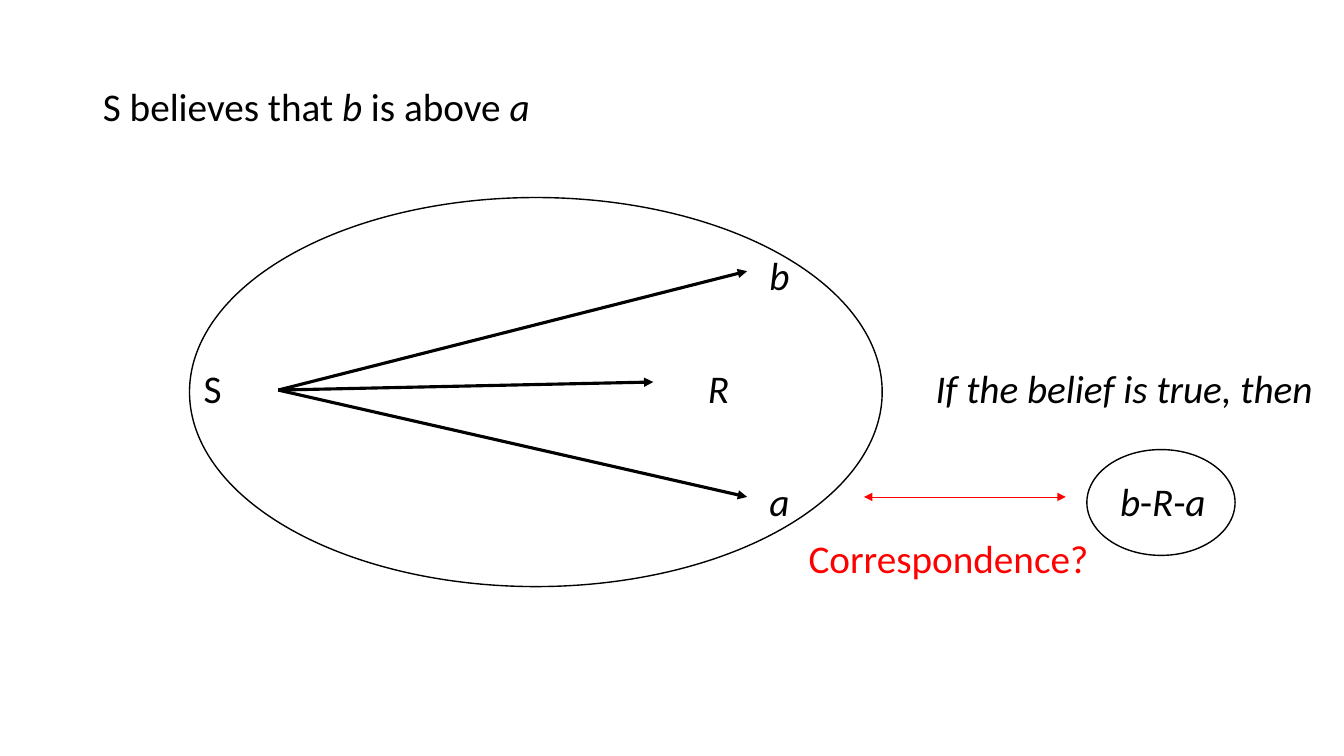
from lxml.etree import SubElement
from pptx import Presentation
from pptx.dml.color import RGBColor
from pptx.enum.shapes import MSO_CONNECTOR, MSO_SHAPE
from pptx.oxml.ns import qn
from pptx.util import Inches, Pt

COLORS = {"ink": "000000", "accent": "FF0000"}
FONT, FONT_SIZE = "Calibri", 28
TEXT_TOP, ROW_PITCH, ROW_HEIGHT = 0.82, 0.56, 0.53

STATEMENT = [("S believes that ", False), ("b", True), (" is above ", False), ("a", True)]
LABELS = [
    (3, 7.63, 0.4, [("b", True)], "ink"),
    (5, 2.02, 0.4, [("S", False)], "ink"),
    (5, 7.02, 0.4, [("R", True)], "ink"),
    (5, 9.28, 4.0, [("If the belief is true, then", True)], "ink"),
    (7, 7.63, 0.4, [("a", True)], "ink"),
    (7, 11.11, 1.1, [("b", True), ("-", False), ("R", True), ("-", False), ("a", True)], "ink"),
    (8, 8.02, 3.0, [("Correspondence?", False)], "accent"),
]
SUBJECT = (2.76, 3.87)
BELIEF_TARGETS = [(7.41, 2.69), (6.48, 3.79), (7.41, 4.93)]
CORRESPONDENCE = ((8.57, 4.93), (10.57, 4.93))
ELLIPSES = [(1.88, 1.96, 6.87, 3.86), (10.78, 4.46, 1.47, 1.05)]


def color(name):
    return RGBColor.from_string(COLORS[name])


def write_text(shape, runs, color_name):
    frame = shape.text_frame
    frame.word_wrap = True
    frame.margin_left = frame.margin_right = 0
    frame.margin_top = frame.margin_bottom = Inches(0.05)
    paragraph = frame.paragraphs[0]
    paragraph.line_spacing = 0.9
    paragraph.space_before = Pt(0)
    paragraph.font.name = FONT
    paragraph.font.size = Pt(FONT_SIZE)
    paragraph.font.color.rgb = color(color_name)
    for text, italic in runs:
        run = paragraph.add_run()
        run.text = text
        run.font.italic = italic
    return paragraph


def add_arrow(slide, start, end, color_name, width, ends):
    points = [Inches(value) for value in (*start, *end)]
    arrow = slide.shapes.add_connector(MSO_CONNECTOR.STRAIGHT, *points)
    arrow.line.color.rgb = color(color_name)
    arrow.line.width = Pt(width)
    line = arrow.line._get_or_add_ln()
    for end_tag in ends:
        SubElement(line, qn(end_tag), type="triangle")
    SubElement(arrow._element.spPr, qn("a:effectLst"))


def add_ellipse(slide, bounds):
    ellipse = slide.shapes.add_shape(MSO_SHAPE.OVAL, *map(Inches, bounds))
    ellipse.shadow.inherit = False
    ellipse.fill.background()
    ellipse.line.color.rgb = color("ink")
    ellipse.line.width = Pt(1)


def add_statement(slide):
    title, body = slide.placeholders
    title._element.getparent().remove(title._element)
    body.left, body.top = Inches(1.02), Inches(TEXT_TOP)
    body.width, body.height = Inches(11.5), Inches(ROW_HEIGHT)
    properties = write_text(body, STATEMENT, "ink")._p.get_or_add_pPr()
    properties.set("marL", "0")
    properties.set("indent", "0")
    bullet = properties.makeelement(qn("a:buNone"))
    properties.find(qn("a:defRPr")).addprevious(bullet)


def main():
    presentation = Presentation()
    presentation.slide_width = Inches(13.33)
    presentation.slide_height = Inches(7.5)
    slide = presentation.slides.add_slide(presentation.slide_layouts[1])
    add_statement(slide)
    for row, left, width, runs, color_name in LABELS:
        bounds = (left, TEXT_TOP + row * ROW_PITCH, width, ROW_HEIGHT)
        write_text(slide.shapes.add_textbox(*map(Inches, bounds)), runs, color_name)
    for target in BELIEF_TARGETS:
        add_arrow(slide, SUBJECT, target, "ink", 2.25, ["a:tailEnd"])
    for bounds in ELLIPSES:
        add_ellipse(slide, bounds)
    add_arrow(slide, *CORRESPONDENCE, "accent", 0.5, ["a:headEnd", "a:tailEnd"])
    presentation.save("out.pptx")


if __name__ == "__main__":
    main()
